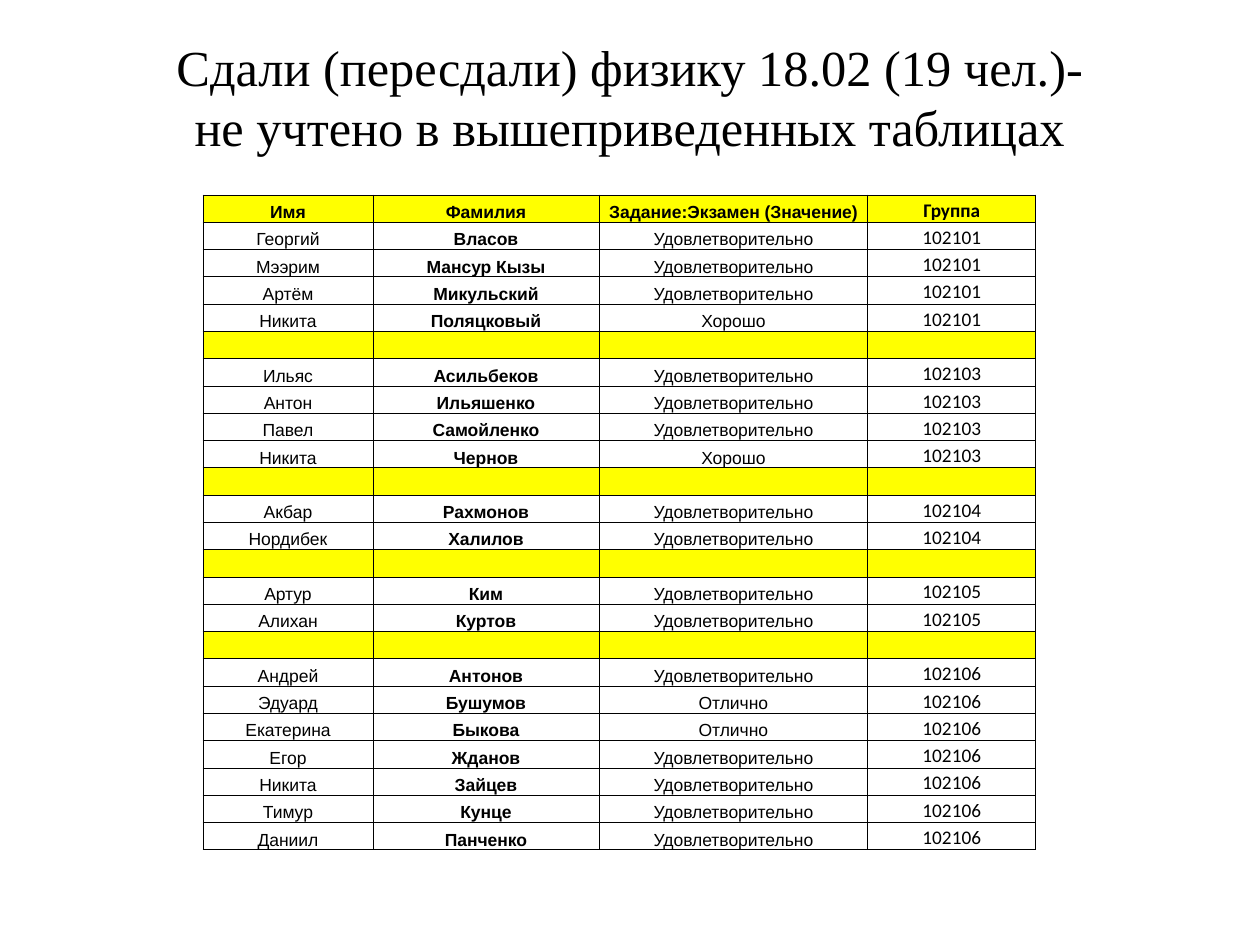
from pptx import Presentation
from pptx import util as u
from pptx.dml.color import RGBColor
from pptx.enum import text
from pptx.oxml import parse_xml
from pptx.oxml.ns import nsdecls

PX = u.Inches(1) / 126
BLACK = RGBColor(0x00, 0x00, 0x00)
YELLOW = RGBColor(0xFF, 0xFF, 0x00)

TITLE_BOX = (63, 38, 1134, 117)
TABLE_BOX = (203, 195, 833, 655)
COLUMN_WIDTHS = (170, 226, 269, 168)

TITLE = ("Сдали (пересдали) физику 18.02 (19 чел.)-",
         "не учтено в вышеприведенных таблицах")
HEADER = ("Имя", "Фамилия", "Задание:Экзамен (Значение)", "Группа")
PASS, GOOD, EXCELLENT = "Удовлетворительно", "Хорошо", "Отлично"
GROUPS = {
    "102101": [("Георгий", "Власов", PASS), ("Мээрим", "Мансур Кызы", PASS),
               ("Артём", "Микульский", PASS), ("Никита", "Поляцковый", GOOD)],
    "102103": [("Ильяс", "Асильбеков", PASS), ("Антон", "Ильяшенко", PASS),
               ("Павел", "Самойленко", PASS), ("Никита", "Чернов", GOOD)],
    "102104": [("Акбар", "Рахмонов", PASS), ("Нордибек", "Халилов", PASS)],
    "102105": [("Артур", "Ким", PASS), ("Алихан", "Куртов", PASS)],
    "102106": [("Андрей", "Антонов", PASS), ("Эдуард", "Бушумов", EXCELLENT),
               ("Екатерина", "Быкова", EXCELLENT), ("Егор", "Жданов", PASS),
               ("Никита", "Зайцев", PASS), ("Тимур", "Кунце", PASS),
               ("Даниил", "Панченко", PASS)],
}


def px(length):
    return u.Emu(round(length * PX))


def write(para, *lines, font, size, bold=False, color=BLACK):
    """Fill a centred paragraph; an empty one still keeps the given size."""
    para.alignment = text.PP_ALIGN.CENTER
    for index, line in enumerate(lines):
        if index:
            para.add_line_break()
        span = para.add_run()
        span.text = line
        span.font.name = font
        span.font.size = u.Pt(size)
        span.font.bold = bold
        span.font.color.rgb = color
    if not lines:
        para._p.append(parse_xml(
            f'<a:endParaRPr {nsdecls("a")} sz="{size * 100}"/>'))


def add_borders(cell):
    """Give all four sides a thin black line, placed before the cell's fill."""
    properties = cell._tc.get_or_add_tcPr()
    for index, side in enumerate(("lnL", "lnR", "lnT", "lnB")):
        properties.insert(index, parse_xml(
            f'<a:{side} {nsdecls("a")} w="{u.Pt(0.5)}"><a:solidFill>'
            f'<a:srgbClr val="{BLACK}"/></a:solidFill></a:{side}>'))


def format_cell(cell, yellow):
    cell.vertical_anchor = text.MSO_ANCHOR.BOTTOM
    cell.margin_left = cell.margin_right = cell.margin_top = px(1)
    cell.margin_bottom = 0
    if yellow:
        cell.fill.solid()
        cell.fill.fore_color.rgb = YELLOW
    else:
        cell.fill.background()
    add_borders(cell)


def place_title(page, box):
    title = page.shapes.title
    title.left, title.top, title.width, title.height = map(px, box)
    frame = title.text_frame
    frame.word_wrap = True
    frame.auto_size = text.MSO_AUTO_SIZE.NONE
    frame.vertical_anchor = text.MSO_ANCHOR.MIDDLE
    write(frame.paragraphs[0], *TITLE, font="Times New Roman", size=28.8)


def table_rows():
    """List the header and the students, with an empty row between groups."""
    rows = [HEADER]
    for group, students in GROUPS.items():
        if len(rows) > 1:
            rows.append(())
        rows += [(*student, group) for student in students]
    return rows


def place_results(page, box):
    rows = table_rows()
    frame = page.shapes.add_table(len(rows), len(HEADER), *map(px, box))
    table = frame.table
    table.first_row = table.horz_banding = False
    for column, width in zip(table.columns, COLUMN_WIDTHS):
        column.width = px(width)
    for row_index, row in enumerate(rows):
        table.rows[row_index].height = px(box[3] / len(rows))
        is_header = row is HEADER
        for column_index, heading in enumerate(HEADER):
            cell = table.cell(row_index, column_index)
            format_cell(cell, yellow=is_header or not row)
            is_group = heading == "Группа"
            write(cell.text_frame.paragraphs[0],
                  *row[column_index:column_index + 1],
                  font="Calibri" if is_group else "Arial",
                  size=11 if is_group else 10,
                  bold=is_header or heading == "Фамилия")


def main():
    deck = Presentation()
    deck.slide_width, deck.slide_height = px(1260), px(945)
    page = deck.slides.add_slide(deck.slide_layouts[5])
    place_title(page, TITLE_BOX)
    place_results(page, TABLE_BOX)
    deck.save("out.pptx")


if __name__ == "__main__":
    main()
